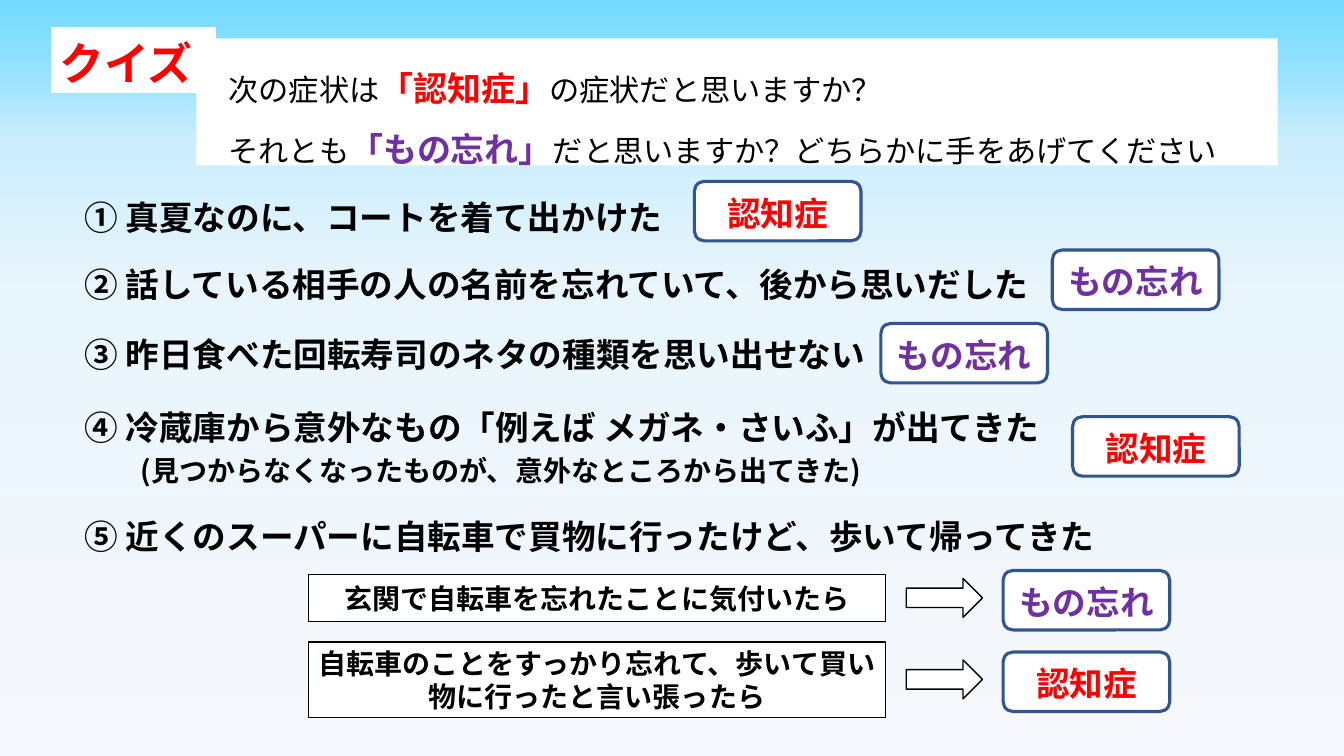
"""Build a quiz slide that sorts symptoms into dementia or forgetfulness."""
import copy

import pptx
import pptx.dml.color
import pptx.enum.shapes
import pptx.enum.text
import pptx.oxml
import pptx.oxml.ns
import pptx.util
from lxml import etree

Cm, Pt = pptx.util.Cm, pptx.util.Pt
SHAPE = pptx.enum.shapes.MSO_SHAPE
ALIGN = pptx.enum.text.PP_ALIGN
MIDDLE = pptx.enum.text.MSO_ANCHOR.MIDDLE
FONT = "Noto Sans CJK JP"
BLACK, WHITE, RED, PURPLE, NAVY = "000000", "FFFFFF", "FF0000", "7030A0", "325491"
DEMENTIA, FORGETFUL = ("認知症", RED), ("もの忘れ", PURPLE)


def rgb(value):
    """Turn a hex string into a colour."""
    return pptx.dml.color.RGBColor.from_string(value)


def style_span(span, size, color=BLACK, bold=True):
    """Format one run, for Latin and East Asian letters alike."""
    span.font.size = Pt(size)
    span.font.bold = bold
    span.font.color.rgb = rgb(color)
    span.font.name = FONT
    east = etree.SubElement(span._r.get_or_add_rPr(), pptx.oxml.ns.qn("a:ea"))
    east.set("typeface", FONT)


def write(para, text, size, color=BLACK, spacing=31, align=ALIGN.LEFT):
    """Fill a paragraph with text in one format."""
    para.text = text
    para.alignment = align
    para.line_spacing = Pt(spacing)
    for span in para.runs:
        style_span(span, size, color)


def indent(para, length):
    """Move a whole paragraph to the right."""
    properties = para._p.get_or_add_pPr()
    properties.set("marL", str(length))
    properties.set("indent", "0")


def add_panel(page, kind, box, line, width):
    """Draw a white shape with an outline."""
    panel = page.shapes.add_shape(kind, *(Cm(length) for length in box))
    panel.shadow.inherit = False
    panel.fill.solid()
    panel.fill.fore_color.rgb = rgb(WHITE)
    panel.line.color.rgb = rgb(line)
    panel.line.width = Pt(width)
    frame = panel.text_frame
    frame.vertical_anchor = MIDDLE
    frame.margin_left = frame.margin_right = Cm(0.2)
    return panel


def paint_background(page, stops):
    """Fill the page with a vertical gradient."""
    fill = page.background.fill
    fill.gradient()
    fill.gradient_angle = 270
    stop_list = next(page.element.iter(pptx.oxml.ns.qn("a:gsLst")))
    while len(stop_list) < len(stops):
        stop_list.append(copy.deepcopy(stop_list[0]))
    for stop, (position, color) in zip(fill.gradient_stops, stops):
        stop.position = position
        stop.color.rgb = rgb(color)


def add_question(page, box):
    """Write the question into the title placeholder."""
    left, top, width, height = (Cm(length) for length in box)
    title = page.shapes.title
    title.left, title.top, title.width, title.height = left, top, width, height
    title.fill.solid()
    title.fill.fore_color.rgb = rgb(WHITE)
    frame = title.text_frame
    frame.auto_size = pptx.enum.text.MSO_AUTO_SIZE.NONE
    frame.word_wrap = True
    frame.vertical_anchor = MIDDLE
    frame.margin_top, frame.margin_bottom = Cm(0.3), 0
    lines = [
        ("次の症状は", "「認知症」", RED, "の症状だと思いますか？"),
        ("それとも", "「もの忘れ」", PURPLE, "だと思いますか？どちらかに手をあげてください"),
    ]
    frame.text = "\n".join(line[0] for line in lines)
    for para, (_, term, color, ending) in zip(frame.paragraphs, lines):
        indent(para, Cm(0.55))
        para.alignment = ALIGN.LEFT
        para.line_spacing = Pt(44)
        style_span(para.runs[0], 21.6, bold=False)
        for text, size, shade, bold in ((term, 24.3, color, True), (ending, 21.6, BLACK, False)):
            span = para.add_run()
            span.text = text
            style_span(span, size, shade, bold)


def add_label(page, box):
    """Place the quiz label."""
    label = add_panel(page, SHAPE.RECTANGLE, box, WHITE, 1)
    label.text_frame.word_wrap = False
    write(label.text_frame.paragraphs[0], "クイズ", 32, RED, 42)


def add_answer(page, left, top, answer):
    """Place a rounded answer card."""
    text, color = answer
    card = add_panel(page, SHAPE.ROUNDED_RECTANGLE, (left, top, 4.2, 1.5), NAVY, 2.25)
    write(card.text_frame.paragraphs[0], text, 24, color, align=ALIGN.CENTER)


def add_statement(page, box, text, detail=None):
    """Place a numbered statement with an optional smaller second line."""
    frame = page.shapes.add_textbox(*(Cm(length) for length in box)).text_frame
    frame.word_wrap = True
    write(frame.paragraphs[0], text, 24)
    if detail:
        para = frame.add_paragraph()
        indent(para, Cm(1.41))
        write(para, detail, 20, spacing=24.5)
        para.space_before = Pt(4)


def add_case(page, box, text, answer):
    """Place a case box with an arrow to its answer."""
    left, top, width, height = box
    middle = top + height / 2
    case = add_panel(page, SHAPE.RECTANGLE, box, BLACK, 1)
    write(case.text_frame.paragraphs[0], text, 20, spacing=24, align=ALIGN.CENTER)
    arrow_box = (left + width + 0.52, middle - 0.5, 1.92, 0.98)
    add_panel(page, SHAPE.RIGHT_ARROW, arrow_box, BLACK, 1)
    add_answer(page, left + width + 2.96, middle - 0.7, answer)


def main():
    """Build and save the slide."""
    deck = pptx.Presentation()
    deck.slide_width, deck.slide_height = Cm(33.87), Cm(19.05)
    page = deck.slides.add_slide(deck.slide_layouts[5])
    paint_background(page, [(0, "71DAFF"), (0.09, "93E1FE"), (0.19, "CCEEFD"),
                            (0.39, "E9F5FC"), (1, "F6F8FC")])
    add_question(page, (4.95, 0.97, 27.25, 3.2))
    statements = [
        (4.75, 16.2, "① 真夏なのに、コートを着て出かけた", None),
        (6.45, 24.64, "② 話している相手の人の名前を忘れていて、後から思いだした", None),
        (8.2, 21.64, "③ 昨日食べた回転寿司のネタの種類を思い出せない", None),
        (10.06, 25.63, "④ 冷蔵庫から意外なもの「例えば メガネ・さいふ」が出てきた",
         "(見つからなくなったものが、意外なところから出てきた)"),
        (12.8, 29.3, "⑤ 近くのスーパーに自転車で買物に行ったけど、歩いて帰ってきた", None),
    ]
    for top, width, text, detail in statements:
        add_statement(page, (1.88, top, width, 2.31 if detail else 1.27), text, detail)
    for left, top, answer in [(17.5, 4.57, DEMENTIA), (26.52, 6.3, FORGETFUL),
                              (22.2, 8.15, FORGETFUL), (27.03, 10.5, DEMENTIA)]:
        add_answer(page, left, top, answer)
    add_case(page, (7.77, 14.48, 14.55, 1.19), "玄関で自転車を忘れたことに気付いたら", FORGETFUL)
    add_case(page, (7.77, 16.18, 14.55, 1.9),
             "自転車のことをすっかり忘れて、歩いて買い物に行ったと言い張ったら", DEMENTIA)
    add_label(page, (1.3, 0.69, 4.14, 1.63))
    deck.save("out.pptx")


if __name__ == "__main__":
    main()
